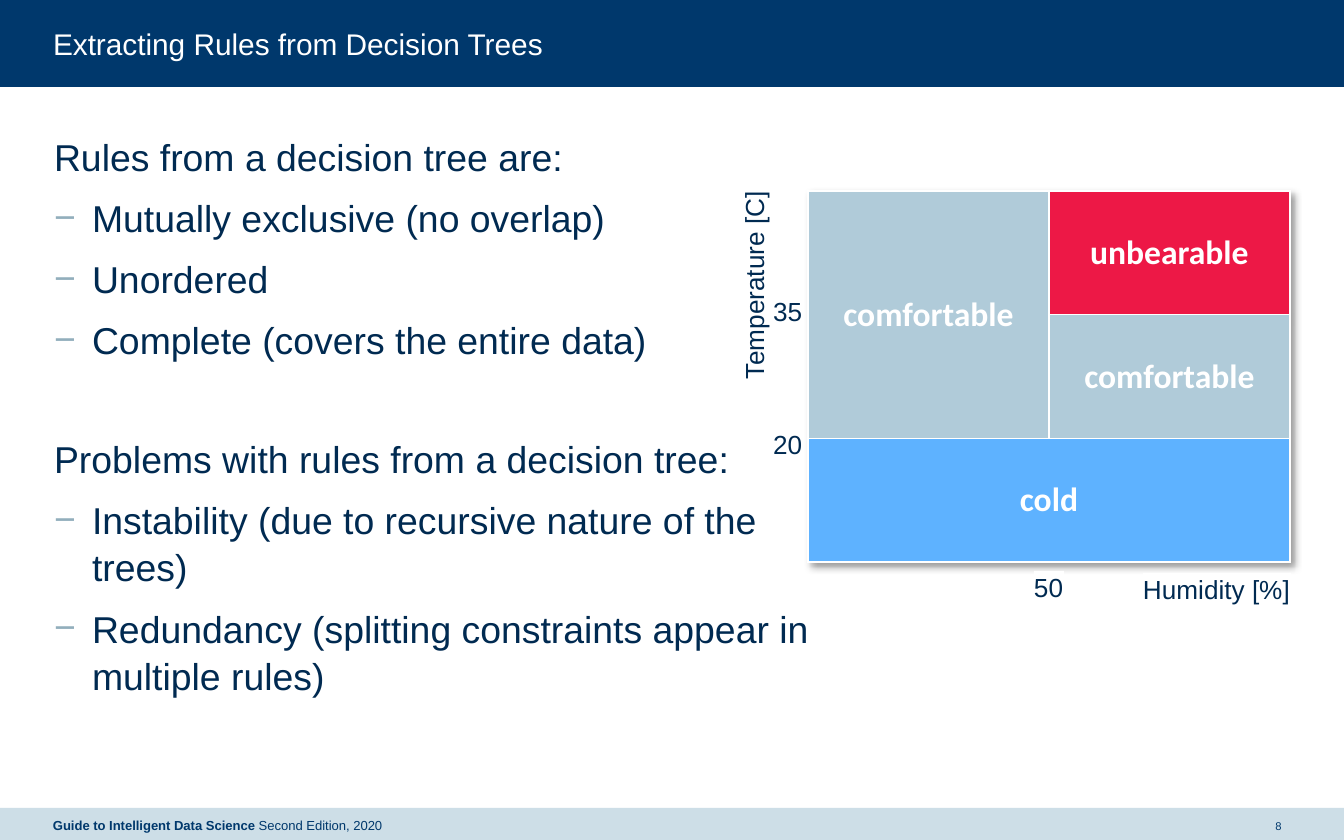
"""Build the slide on extracting rules from decision trees."""
from lxml import etree
from pptx import Presentation
from pptx.dml.color import RGBColor
from pptx.enum import shapes, text
from pptx.oxml import ns
from pptx import util as u

SCALE = 914400 / 134.4
NAVY, INK, WHITE, MIST = "00386C", "002A51", "FFFFFF", "B0CBD9"

TITLE = "Extracting Rules from Decision Trees"
SECTIONS = [
    ("Rules from a decision tree are:", [
        "Mutually exclusive (no overlap)",
        "Unordered",
        "Complete (covers the entire data)",
    ]),
    ("Problems with rules from a decision tree:", [
        "Instability (due to recursive nature of the trees)",
        "Redundancy (splitting constraints appear in multiple rules)",
    ]),
]
BANDS = [((0, 0, 1344, 87), NAVY), ((0, 808, 1344, 35), "CDDEE7")]
FOOTER = [("Guide to Intelligent Data Science ", True), ("Second Edition, 2020", False)]
PAGE_NUMBER = "8"
GRID = (808, 191, 482, 371)
REGIONS = [
    ((0, 0), (1, 0), "comfortable", MIST),
    ((0, 1), (0, 1), "unbearable", "ED1846"),
    ((1, 1), (1, 1), "comfortable", MIST),
    ((2, 0), (2, 1), "cold", "5EB2FF"),
]
AXIS_LABELS = [
    ("50", (1034, 571, 30, 32), 0),
    ("Temperature [C]", (660, 269, 188, 32), 270),
    ("Humidity [%]", (1143, 573, 148, 32), 0),
    ("20", (773, 428, 30, 32), 0),
    ("35", (773, 295, 30, 32), 0),
]


def px(length):
    return u.Emu(round(length * SCALE))


def color(value):
    return RGBColor.from_string(value)


def paint(target, value):
    target.fill.solid()
    target.fill.fore_color.rgb = color(value)


def place(shape, box):
    shape.left, shape.top, shape.width, shape.height = map(px, box)


def add_xml(parent, tag, **attributes):
    return etree.SubElement(parent, ns.qn(tag), attributes)


def set_frame(frame, wrap=True, anchor=text.MSO_ANCHOR.TOP, fit=text.MSO_AUTO_SIZE.NONE):
    frame.margin_left = frame.margin_right = frame.margin_top = frame.margin_bottom = 0
    frame.word_wrap, frame.vertical_anchor, frame.auto_size = wrap, anchor, fit


def write(para, words, size, ink=INK, font="Arial", bold=False, align=text.PP_ALIGN.LEFT):
    para.alignment = align
    span = para.add_run()
    span.text = words
    span.font.name, span.font.size, span.font.bold = font, u.Pt(size), bold
    span.font.color.rgb = color(ink)


def add_bands(page, layout):
    for box, value in BANDS:
        band = page.shapes.add_shape(shapes.MSO_SHAPE.RECTANGLE, *map(px, box))
        band.shadow.inherit = False
        band.line.fill.background()
        paint(band, value)
        layout.shapes._spTree.insert(2, band._element)


def fill_body(body):
    place(body, (53, 132, 782, 633))
    frame = body.text_frame
    set_frame(frame)
    lines = [(words, level, gap)
             for section, (heading, items) in enumerate(SECTIONS)
             for words, level, gap in [(heading, 0, 38.6 if section else 7.5),
                                       *((item, 1, 7.5) for item in items)]]
    for index, (words, level, gap) in enumerate(lines):
        para = frame.add_paragraph() if index else frame.paragraphs[0]
        para.line_spacing, para.space_before, para.space_after = 1.05, u.Pt(gap), u.Pt(0)
        write(para, words, 20)
        properties = para._p.get_or_add_pPr()
        properties.set("marL", str(px(39 if level else 1)))
        properties.set("indent", str(px(-38 if level else 0)))
        if level:
            add_xml(add_xml(properties, "a:buClr"), "a:srgbClr", val="92AEBC")
            add_xml(properties, "a:buChar", char="−")
        else:
            add_xml(properties, "a:buNone")


def add_border(cell):
    properties = cell._tc.get_or_add_tcPr()
    for side in ("a:lnL", "a:lnR", "a:lnT", "a:lnB"):
        line = add_xml(properties, side, w=str(u.Pt(1)))
        add_xml(add_xml(line, "a:solidFill"), "a:srgbClr", val=WHITE)


def add_shadow(table):
    effects = etree.Element(ns.qn("a:effectLst"))
    shadow = add_xml(effects, "a:outerShdw", blurRad="50800", dist="38100",
                     dir="2700000", algn="tl", rotWithShape="0")
    add_xml(add_xml(shadow, "a:srgbClr", val="000000"), "a:alpha", val="40000")
    table._tbl.tblPr.insert(0, effects)


def add_regions(page):
    table = page.shapes.add_table(3, 2, *map(px, GRID)).table
    table.first_row = table.horz_banding = False
    add_shadow(table)
    for cell in table.iter_cells():
        add_border(cell)
    for first, last, words, value in REGIONS:
        cell = table.cell(*first)
        if first != last:
            cell.merge(table.cell(*last))
        for row in range(first[0], last[0] + 1):
            for column in range(first[1], last[1] + 1):
                paint(table.cell(row, column), value)
        cell.vertical_anchor = text.MSO_ANCHOR.MIDDLE
        write(cell.text_frame.paragraphs[0], words, 18, ink=WHITE, font="Calibri",
              bold=True, align=text.PP_ALIGN.CENTER)


def add_box(page, box, **frame_format):
    shape = page.shapes.add_textbox(*map(px, box))
    set_frame(shape.text_frame, **frame_format)
    return shape, shape.text_frame.paragraphs[0]


def main():
    deck = Presentation()
    deck.slide_width, deck.slide_height = px(1344), px(840)
    layout = deck.slide_layouts[1]
    page = deck.slides.add_slide(layout)
    add_bands(page, layout)

    fill_body(page.placeholders[1])
    title = page.shapes.title
    place(title, (53, 26, 1239, 36))
    set_frame(title.text_frame)
    write(title.text_frame.paragraphs[0], TITLE, 16, ink=WHITE)

    middle = text.MSO_ANCHOR.MIDDLE
    _, para = add_box(page, (1265, 808, 27, 35), anchor=middle)
    write(para, PAGE_NUMBER, 6, ink=NAVY, align=text.PP_ALIGN.CENTER)
    _, para = add_box(page, (53, 808, 590, 35), anchor=middle)
    for words, bold in FOOTER:
        write(para, words, 7, ink=NAVY, bold=bold)

    add_regions(page)
    for words, box, angle in AXIS_LABELS:
        label, para = add_box(page, box, wrap=False, fit=text.MSO_AUTO_SIZE.SHAPE_TO_FIT_TEXT)
        label.rotation = angle
        paint(label, WHITE)
        write(para, words, 14)

    deck.save("out.pptx")


if __name__ == "__main__":
    main()
